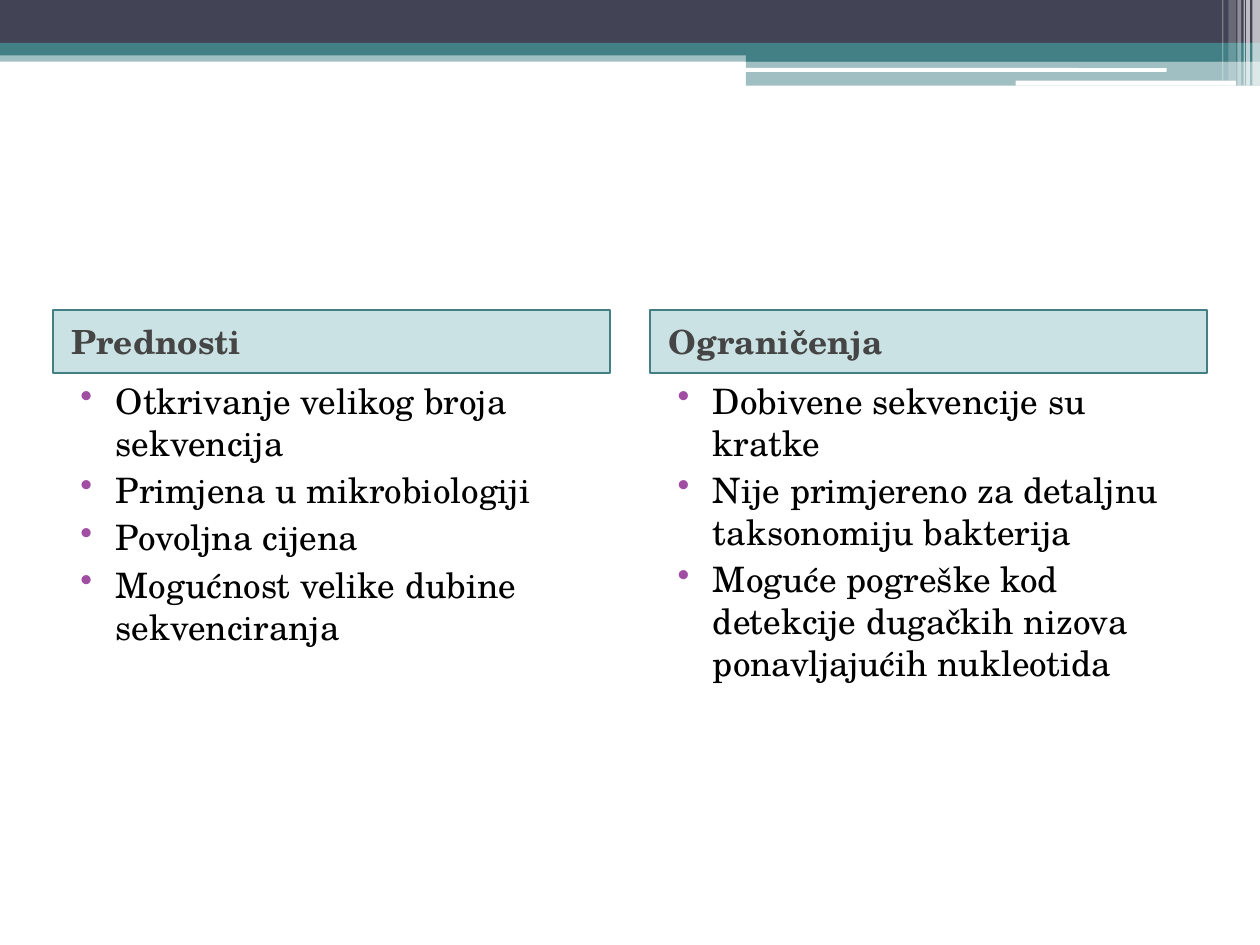
from dataclasses import dataclass

from lxml.etree import SubElement
from pptx import Presentation
from pptx.dml.color import RGBColor
from pptx.enum.shapes import MSO_SHAPE as Preset
from pptx.enum.text import MSO_ANCHOR as Anchor, PP_ALIGN as Align
from pptx.oxml.ns import qn
from pptx.util import Inches, Pt

FONT = "TeX Gyre Schola"
COLORS = {
    "slate": "424456",
    "teal": "438086",
    "white": "FFFFFF",
    "heading_fill": "328E97",
    "heading_text": "454545",
    "bullet": "A04DA3",
    "body": "000000",
}
COLUMN_WIDTH, HEADING_TOP, HEADING_HEIGHT, LIST_HEIGHT = 4.42, 2.46, 0.5, 4.25


@dataclass
class Band:
    left: float
    top: float
    width: float
    height: float
    color: str
    opacity: int = 100
    preset: Preset = Preset.RECTANGLE


@dataclass
class Column:
    left: float
    heading: str
    points: list[str]


BANDS = [
    Band(0, 0.4, 10, 0.09, "teal", 50),
    Band(0, 0, 10, 0.34, "slate"),
    Band(0, 0.34, 10, 0.1, "teal"),
    Band(5.92, 0.39, 4.08, 0.1, "teal"),
    Band(5.92, 0.48, 4.08, 0.2, "teal", 50),
    Band(5.91, 0.54, 3.35, 0.03, "white", preset=Preset.ROUNDED_RECTANGLE),
    Band(8.06, 0.64, 1.75, 0.04, "white", preset=Preset.ROUNDED_RECTANGLE),
    Band(9.94, 0, 0.06, 0.68, "white", 65),
    Band(9.89, 0, 0.03, 0.68, "white", 65),
    Band(9.87, 0, 0.01, 0.68, "white", 60),
    Band(9.82, 0, 0.03, 0.68, "white", 40),
    Band(9.75, 0, 0.06, 0.64, "white", 20),
    Band(9.7, 0, 0.01, 0.64, "white", 30),
]
COLUMNS = [
    Column(0.42, "Prednosti", [
        "Otkrivanje velikog broja sekvencija",
        "Primjena u mikrobiologiji",
        "Povoljna cijena",
        "Mogućnost velike dubine sekvenciranja",
    ]),
    Column(5.16, "Ograničenja", [
        "Dobivene sekvencije su kratke",
        "Nije primjereno za detaljnu taksonomiju bakterija",
        "Moguće pogreške kod detekcije dugačkih nizova ponavljajućih nukleotida",
    ]),
]


def rgb(name: str) -> RGBColor:
    return RGBColor.from_string(COLORS[name])


def draw_band(slide, band: Band):
    shape = slide.shapes.add_shape(
        band.preset, Inches(band.left), Inches(band.top),
        Inches(band.width), Inches(band.height))
    shape.shadow.inherit = False
    shape.line.fill.background()
    shape.fill.solid()
    shape.fill.fore_color.rgb = rgb(band.color)
    if band.opacity < 100:
        color = shape.fill._xPr.find(qn("a:solidFill"))[0]
        SubElement(color, qn("a:alpha"), val=str(band.opacity * 1000))
    return shape


def style_paragraph(paragraph, size: float, color: str, margin: float, indent: float = 0) -> None:
    paragraph.alignment = Align.LEFT
    paragraph.space_before = Pt(3)
    paragraph.font.name = FONT
    paragraph.font.size = Pt(size)
    paragraph.font.color.rgb = rgb(color)
    properties = paragraph._p.get_or_add_pPr()
    properties.set("marL", str(Inches(margin)))
    properties.set("indent", str(Inches(indent)))


def add_bullet(paragraph) -> None:
    properties = paragraph._p.get_or_add_pPr()
    following = properties.find(qn("a:defRPr"))
    bullet_color = SubElement(properties, qn("a:buClr"))
    SubElement(bullet_color, qn("a:srgbClr"), val=COLORS["bullet"])
    bullet = SubElement(properties, qn("a:buChar"), char="•")
    for element in (bullet_color, bullet):
        following.addprevious(element)


def draw_heading(slide, column: Column) -> None:
    heading = draw_band(slide, Band(
        column.left, HEADING_TOP, COLUMN_WIDTH, HEADING_HEIGHT, "heading_fill", 25))
    heading.line.color.rgb = rgb("teal")
    heading.line.width = Pt(1)
    heading.text_frame.vertical_anchor = Anchor.MIDDLE
    title = heading.text_frame.paragraphs[0]
    title.text = column.heading
    style_paragraph(title, 19, "heading_text", 0.05)
    title.font.bold = True


def draw_points(slide, column: Column) -> None:
    frame = slide.shapes.add_textbox(
        Inches(column.left), Inches(HEADING_TOP + HEADING_HEIGHT),
        Inches(COLUMN_WIDTH), Inches(LIST_HEIGHT)).text_frame
    frame.word_wrap = True
    frame.text = "\n".join(column.points)
    for point in frame.paragraphs:
        style_paragraph(point, 20, "body", 0.4, -0.28)
        add_bullet(point)


def main() -> None:
    """Build the slide comparing advantages and limitations."""
    deck = Presentation()
    deck.slide_width, deck.slide_height = Inches(10), Inches(7.5)
    slide = deck.slides.add_slide(deck.slide_layouts[6])
    for band in BANDS:
        draw_band(slide, band)
    for column in COLUMNS:
        draw_heading(slide, column)
        draw_points(slide, column)
    deck.save("out.pptx")


if __name__ == "__main__":
    main()
